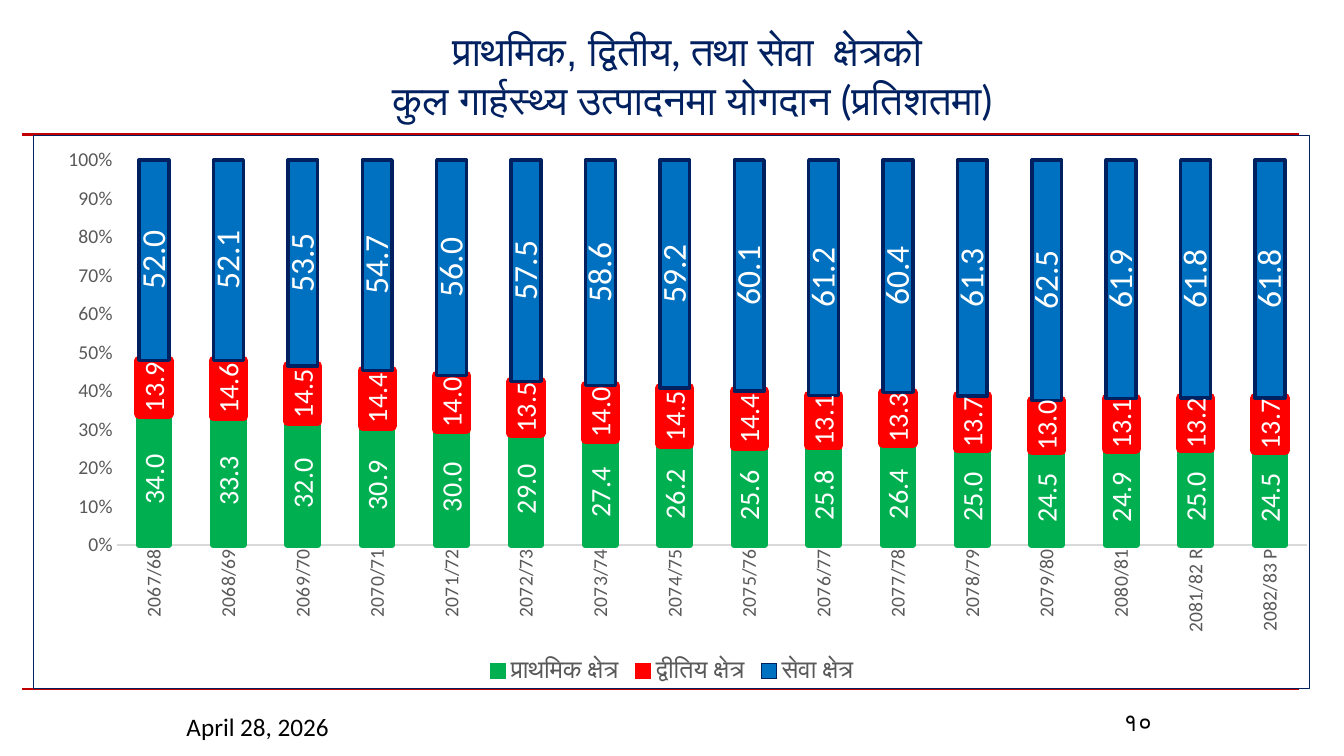
"""Build a slide on the share of three sectors in gross domestic product."""
import pptx
import pptx.chart.data
import pptx.dml.color
import pptx.enum.chart
import pptx.enum.shapes
import pptx.enum.text
import pptx.oxml
import pptx.oxml.ns
import pptx.util
from pptx.util import Cm, Pt

COLORS = {
    "navy": "002060", "rule": "C00000", "black": "000000", "white": "FFFFFF",
    "grey": "595959", "axis": "D9D9D9",
    "green": "00B050", "red": "FF0000", "blue": "0070C0",
}
TITLE_LINES = [
    [("प्राथमि", "Lato"), ("क, द्वितीय", "Arial"), (", तथा ", "Lato"),
     ("सेवा  क्षेत्रको ", "Arial")],
    [("कुल गार्हस्थ्य उत्पादन", "Arial"), ("मा योगदान (प्रतिशतमा)", "Lato")],
]
DATE_LINES = [[("April 28, 2026", "Calibri")]]
NUMBER_LINES = [[("१०", "Roboto")]]
YEARS = [
    "2067/68", "2068/69", "2069/70", "2070/71", "2071/72", "2072/73",
    "2073/74", "2074/75", "2075/76", "2076/77", "2077/78", "2078/79",
    "2079/80", "2080/81", "2081/82 R", "2082/83 P",
]
SECTORS = [
    {"name": "प्राथमिक क्षेत्र", "fill": "green", "line": "green", "width": 5, "size": 20,
     "values": [34, 33.3, 32, 30.9, 30, 29, 27.4, 26.2,
                25.6, 25.8, 26.4, 25, 24.5, 24.9, 25, 24.5]},
    {"name": "द्वीतिय क्षेत्र", "fill": "red", "line": "red", "width": 6.75, "size": 20,
     "values": [13.9, 14.6, 14.5, 14.4, 14, 13.5, 14, 14.5,
                14.4, 13.1, 13.3, 13.7, 13, 13.1, 13.2, 13.7]},
    {"name": "सेवा क्षेत्र", "fill": "blue", "line": "navy", "width": 2.5, "size": 24,
     "values": [52, 52.1, 53.5, 54.7, 56, 57.5, 58.6, 59.2,
                60.1, 61.2, 60.4, 61.3, 62.5, 61.9, 61.8, 61.8]},
]
CHART_TOP, CHART_HEIGHT = 3.39, 13.97
PLOT_AREA = {"x": 0.065, "y": 0.045, "w": 0.933, "h": 0.696}
NAMESPACES = pptx.oxml.ns.nsdecls("a", "c")


def color(name):
    return pptx.dml.color.RGBColor.from_string(COLORS[name])


def set_font(font, size, color_name, face="Calibri"):
    font.name, font.size = face, Pt(size)
    font.color.rgb = color(color_name)


def set_line(line, color_name, width):
    line.color.rgb = color(color_name)
    line.width = Pt(width)


def add_text(slide, box, lines, size, color_name, centred=True):
    frame = slide.shapes.add_textbox(*map(Cm, box)).text_frame
    frame.word_wrap = True
    frame.vertical_anchor = pptx.enum.text.MSO_ANCHOR.MIDDLE
    paragraph = frame.paragraphs[0]
    if centred:
        paragraph.alignment = pptx.enum.text.PP_ALIGN.CENTER
    for index, pieces in enumerate(lines):
        if index:
            paragraph.add_line_break()
        for text, face in pieces:
            run = paragraph.add_run()
            run.text = text
            set_font(run.font, size, color_name, face)


def add_rule(slide, top):
    rule = slide.shapes.add_connector(
        pptx.enum.shapes.MSO_CONNECTOR.STRAIGHT, Cm(0.56), Cm(top), Cm(32.74), Cm(top))
    set_line(rule.line, "rule", 1.5)
    rule.element.spPr.append(pptx.oxml.parse_xml(f"<a:effectLst {NAMESPACES}/>"))


def style_axes(chart):
    for axis in (chart.category_axis, chart.value_axis):
        axis.major_tick_mark = pptx.enum.chart.XL_TICK_MARK.NONE
        axis.has_major_gridlines = False
        set_font(axis.tick_labels.font, 14, "grey")
    set_line(chart.category_axis.format.line, "axis", 0.75)
    chart.value_axis.format.line.fill.background()
    chart.value_axis.tick_labels.number_format = "0%"
    chart.value_axis.tick_labels.number_format_is_linked = False


def style_sectors(plot):
    plot.gap_width, plot.overlap = 150, 100
    plot.vary_by_categories = False
    for series, sector in zip(plot.series, SECTORS):
        series.format.fill.solid()
        series.format.fill.fore_color.rgb = color(sector["fill"])
        set_line(series.format.line, sector["line"], sector["width"])
        labels = series.data_labels
        labels.show_value = True
        labels.number_format, labels.number_format_is_linked = "0.0", False
        labels.position = pptx.enum.chart.XL_LABEL_POSITION.CENTER
        set_font(labels.font, sector["size"], "white")


def place_plot_and_border(chart):
    root = chart.element
    for body in root.xpath(".//c:dLbls/c:txPr/a:bodyPr | .//c:catAx/c:txPr/a:bodyPr"):
        body.set("rot", "-5400000")
        body.set("vert", "horz")
    plot_area = root.xpath("c:chart/c:plotArea")[0]
    for layout in plot_area.xpath("c:layout"):
        plot_area.remove(layout)
    modes = "".join(f'<c:{key}Mode val="edge"/>' for key in "xy")
    extents = "".join(f'<c:{key} val="{value}"/>' for key, value in PLOT_AREA.items())
    plot_area.insert(0, pptx.oxml.parse_xml(
        f'<c:layout {NAMESPACES}><c:manualLayout><c:layoutTarget val="inner"/>'
        f"{modes}{extents}</c:manualLayout></c:layout>"))
    root.xpath("c:chart")[0].addnext(pptx.oxml.parse_xml(
        f'<c:spPr {NAMESPACES}><a:noFill/><a:ln w="{Pt(0.75)}"><a:solidFill>'
        f'<a:srgbClr val="{COLORS["navy"]}"/></a:solidFill></a:ln></c:spPr>'))


def add_sector_chart(slide):
    data = pptx.chart.data.CategoryChartData(number_format="0.0")
    data.categories = YEARS
    for sector in SECTORS:
        data.add_series(sector["name"], sector["values"])
    chart = slide.shapes.add_chart(
        pptx.enum.chart.XL_CHART_TYPE.COLUMN_STACKED_100,
        Cm(0.84), Cm(CHART_TOP), Cm(32.18), Cm(CHART_HEIGHT), data).chart
    set_font(chart.font, 14, "black")
    chart.has_title = False
    chart.has_legend = True
    chart.legend.position = pptx.enum.chart.XL_LEGEND_POSITION.BOTTOM
    chart.legend.include_in_layout = False
    set_font(chart.legend.font, 18, "grey")
    style_axes(chart)
    style_sectors(chart.plots[0])
    place_plot_and_border(chart)


def main():
    presentation = pptx.Presentation()
    presentation.slide_width, presentation.slide_height = Cm(33.87), Cm(19.05)
    slide = presentation.slides.add_slide(presentation.slide_layouts[6])
    for top in (CHART_TOP, CHART_TOP + CHART_HEIGHT):
        add_rule(slide, top)
    add_text(slide, (4.45, 17.78, 5.51, 1.04), DATE_LINES, 18, "black", centred=False)
    add_text(slide, (27.94, 17.58, 1.47, 1.22), NUMBER_LINES, 18, "black")
    add_sector_chart(slide)
    add_text(slide, (6.65, 0.58, 21.59, 2.62), TITLE_LINES, 28.8, "navy")
    presentation.save("out.pptx")


if __name__ == "__main__":
    main()
